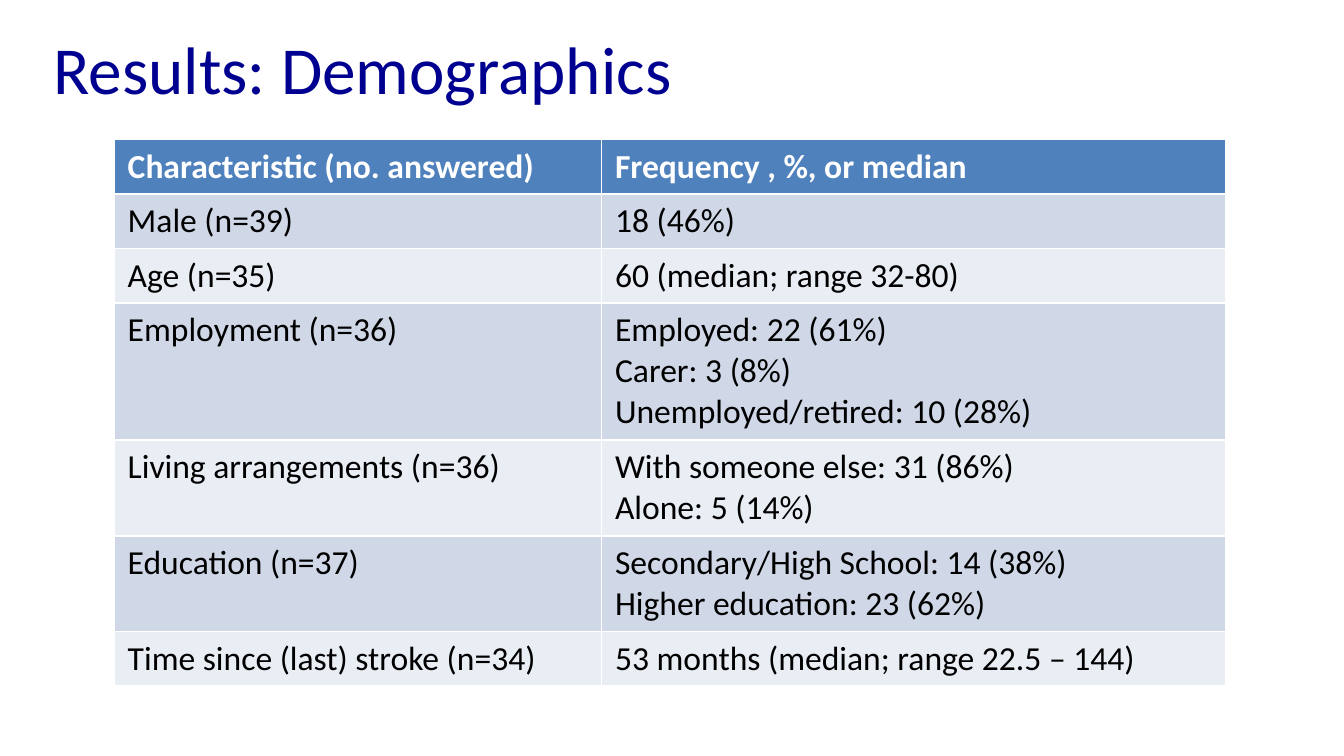
from pptx import Presentation
from pptx.dml.color import RGBColor
from pptx.enum.text import MSO_ANCHOR, PP_ALIGN
from pptx.util import Cm, Pt

TOP = MSO_ANCHOR.TOP
LEFT = PP_ALIGN.LEFT
TITLE_ONLY = 5
ROW_HEIGHT = 1.03
EXTRA_LINE = 0.78
COLUMN_WIDTHS = [9.21, 11.79]
HEADER_FILL = "4F81BD"
BAND_FILLS = ["E9EDF4", "D0D8E8"]


def colour(value):
    return RGBColor.from_string(value)


def format_text(para, size, hex_colour, bold):
    para.alignment = LEFT
    para.font.color.rgb = colour(hex_colour)
    formats = {"name": "Calibri", "size": Pt(size), "bold": bold}
    for name, value in formats.items():
        setattr(para.font, name, value)


rows = [
    ("Characteristic (no. answered)", "Frequency , %, or median"),
    ("Male (n=39)", "18 (46%)"),
    ("Age (n=35)", "60 (median; range 32-80)"),
    ("Employment (n=36)", "Employed: 22 (61%)\nCarer: 3 (8%)\nUnemployed/retired: 10 (28%)"),
    ("Living arrangements (n=36)", "With someone else: 31 (86%)\nAlone: 5 (14%)"),
    ("Education (n=37)", "Secondary/High School: 14 (38%)\nHigher education: 23 (62%)"),
    ("Time since (last) stroke (n=34)", "53 months (median; range 22.5 – 144)"),
]

deck = Presentation()
deck.slide_width = Cm(25.4)
deck.slide_height = Cm(14.29)
page = deck.slides.add_slide(deck.slide_layouts[TITLE_ONLY])

title = page.shapes.title
title_place = {"left": 0.76, "top": 0.38, "width": 22, "height": 1.8}
for name, value in title_place.items():
    setattr(title, name, Cm(value))
title.text_frame.text = "Results: Demographics"
title.text_frame.vertical_anchor = TOP
format_text(title.text_frame.paragraphs[0], 36, "000090", False)

heights = [ROW_HEIGHT + EXTRA_LINE * values.count("\n") for label, values in rows]
table = page.shapes.add_table(
    len(rows), len(COLUMN_WIDTHS), Cm(2.16), Cm(2.64),
    Cm(sum(COLUMN_WIDTHS)), Cm(sum(heights)),
).table
for column, width in zip(table.columns, COLUMN_WIDTHS):
    column.width = Cm(width)

for row_index, texts in enumerate(rows):
    is_header = row_index == 0
    table.rows[row_index].height = Cm(heights[row_index])
    for column_index, text in enumerate(texts):
        cell = table.cell(row_index, column_index)
        cell.text = text
        cell.fill.solid()
        cell.fill.fore_color.rgb = colour(HEADER_FILL if is_header else BAND_FILLS[row_index % 2])
        for para in cell.text_frame.paragraphs:
            format_text(para, 18, "FFFFFF" if is_header else "000000", is_header)

deck.save("out.pptx")
